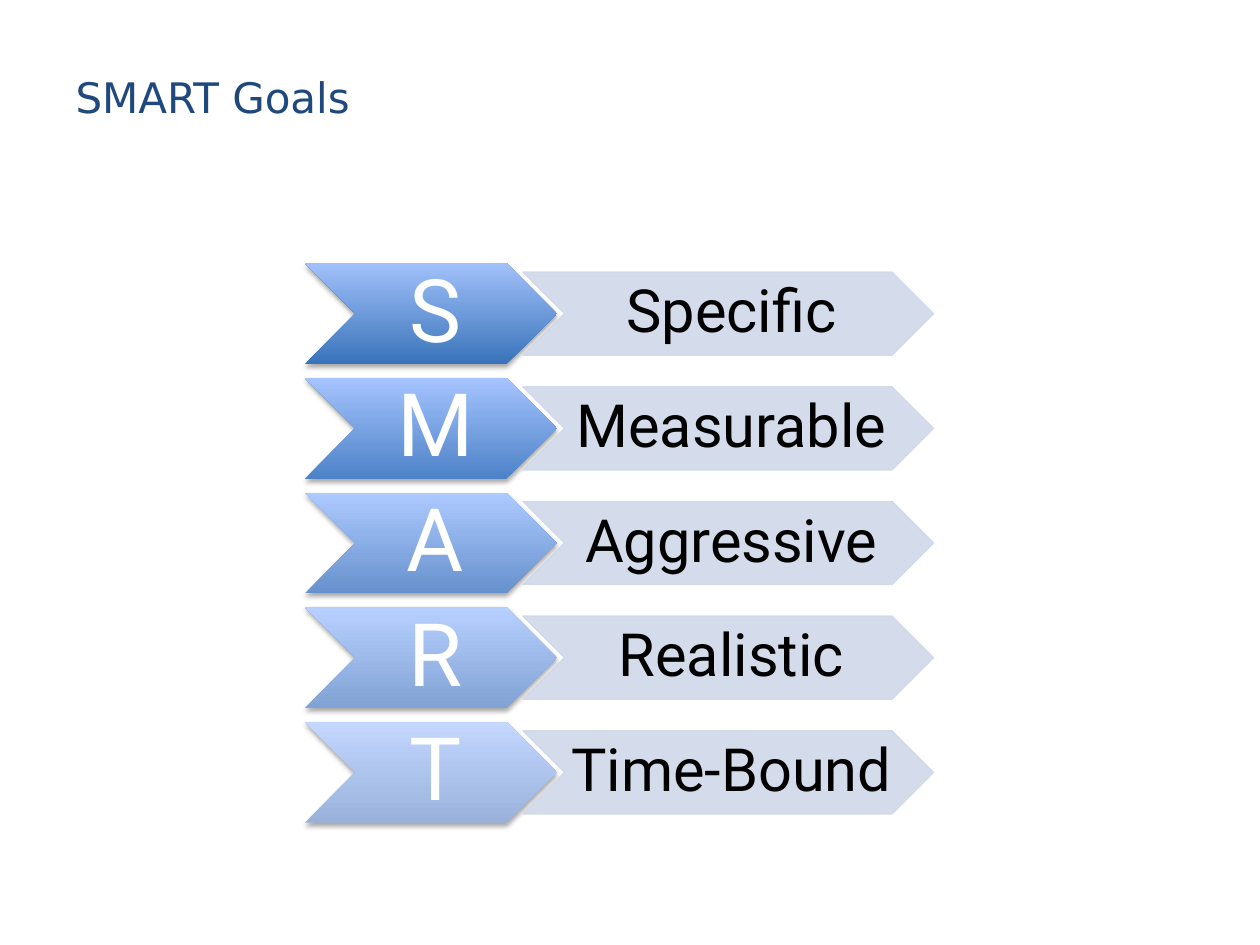
"""Build a slide that spells out the SMART goals as five rows of chevrons."""

from dataclasses import dataclass

from lxml.etree import SubElement
from pptx import Presentation
from pptx.dml.color import RGBColor
from pptx.enum.shapes import MSO_SHAPE
from pptx.enum.text import MSO_ANCHOR, PP_ALIGN
from pptx.oxml.ns import qn
from pptx.shapes.autoshape import Shape
from pptx.shapes.shapetree import GroupShapes
from pptx.text.text import TextFrame
from pptx.util import Inches, Pt

TITLE_BLUE = RGBColor(0x1F, 0x49, 0x7D)
WORD_FILL = RGBColor(0xD0, 0xD8, 0xE8)
WHITE = RGBColor(0xFF, 0xFF, 0xFF)
BLACK = RGBColor(0x00, 0x00, 0x00)
TITLE_FONT = "DejaVu Sans"
BODY_FONT = "Roboto"

FIRST_CENTER = Inches(2.49)
ROW_PITCH = Inches(0.91)
WORD_OPACITY = "90000"


@dataclass(frozen=True)
class Column:
    left: float
    width: float
    height: float
    font_size: int
    color: RGBColor
    inset_left: float
    inset_vertical: float


@dataclass(frozen=True)
class Goal:
    letter: str
    word: str
    dark: RGBColor
    light: RGBColor


LETTERS = Column(2.42, 2, 0.8, 50, WHITE, 0.07, 0.03)
WORDS = Column(4.15, 3.26, 0.66, 34, BLACK, 0.05, 0.02)

GOALS = (
    Goal("S", "Specific", RGBColor(0x39, 0x74, 0xBA), RGBColor(0xA1, 0xC0, 0xFA)),
    Goal("M", "Measurable", RGBColor(0x4D, 0x82, 0xC7), RGBColor(0xA5, 0xC4, 0xFF)),
    Goal("A", "Aggressive", RGBColor(0x67, 0x91, 0xCD), RGBColor(0xAD, 0xCA, 0xFF)),
    Goal("R", "Realistic", RGBColor(0x81, 0xA2, 0xD4), RGBColor(0xB7, 0xD0, 0xFF)),
    Goal("T", "Time-Bound", RGBColor(0x9A, 0xB2, 0xDB), RGBColor(0xC3, 0xD7, 0xFF)),
)


def write(frame: TextFrame, text: str, font: str, size: int, color: RGBColor,
          alignment: PP_ALIGN) -> None:
    """Write one formatted run, centred vertically."""
    frame.word_wrap = True
    frame.vertical_anchor = MSO_ANCHOR.MIDDLE
    paragraph = frame.paragraphs[0]
    paragraph.alignment = alignment
    run = paragraph.add_run()
    run.text = text
    run.font.name = font
    run.font.size = Pt(size)
    run.font.color.rgb = color


def add_chevron(shapes: GroupShapes, column: Column, row: int, text: str) -> Shape:
    """Add a labelled chevron at a row of a column."""
    height = Inches(column.height)
    top = FIRST_CENTER + row * ROW_PITCH - height // 2
    shape = shapes.add_shape(MSO_SHAPE.CHEVRON, Inches(column.left), top,
                             Inches(column.width), height)
    shape.shadow.inherit = False
    frame = shape.text_frame
    frame.margin_left = Inches(column.inset_left)
    frame.margin_right = 0
    frame.margin_top = frame.margin_bottom = Inches(column.inset_vertical)
    write(frame, text, BODY_FONT, column.font_size, column.color, PP_ALIGN.CENTER)
    frame.paragraphs[0].line_spacing = 0.9
    return shape


def style_letter(shape: Shape, goal: Goal) -> None:
    """Give a letter chevron its gradient and soft shadow."""
    shape.line.fill.background()
    shape.fill.gradient()
    shape.fill.gradient_angle = 90
    for stop, color in zip(shape.fill.gradient_stops, (goal.dark, goal.light)):
        stop.color.rgb = color
    effects = shape._element.spPr.find(qn("a:effectLst"))
    shadow = SubElement(effects, qn("a:outerShdw"), blurRad=str(Pt(3.1)),
                        dist=str(Pt(1.8)), dir="5400000", rotWithShape="0")
    color = SubElement(shadow, qn("a:srgbClr"), val=str(BLACK))
    SubElement(color, qn("a:alpha"), val="35000")


def style_word(shape: Shape) -> None:
    """Give a word chevron its translucent fill and outline."""
    shape.fill.solid()
    shape.fill.fore_color.rgb = WORD_FILL
    shape.line.color.rgb = WORD_FILL
    shape.line.width = Pt(0.75)
    for color in shape._element.spPr.iter(qn("a:srgbClr")):
        SubElement(color, qn("a:alpha"), val=WORD_OPACITY)


def main() -> None:
    """Build and save the presentation."""
    presentation = Presentation()
    presentation.slide_width = Inches(10)
    presentation.slide_height = Inches(7.5)
    slide = presentation.slides.add_slide(presentation.slide_layouts[5])

    title = slide.shapes.title
    title.left, title.top = Inches(0.5), Inches(0.14)
    title.width, title.height = Inches(9), Inches(1.25)
    write(title.text_frame, "SMART Goals", TITLE_FONT, 24, TITLE_BLUE, PP_ALIGN.LEFT)

    diagram = slide.shapes.add_group_shape().shapes
    for row, goal in enumerate(GOALS):
        style_letter(add_chevron(diagram, LETTERS, row, goal.letter), goal)
        style_word(add_chevron(diagram, WORDS, row, goal.word))

    presentation.save("out.pptx")


if __name__ == "__main__":
    main()
